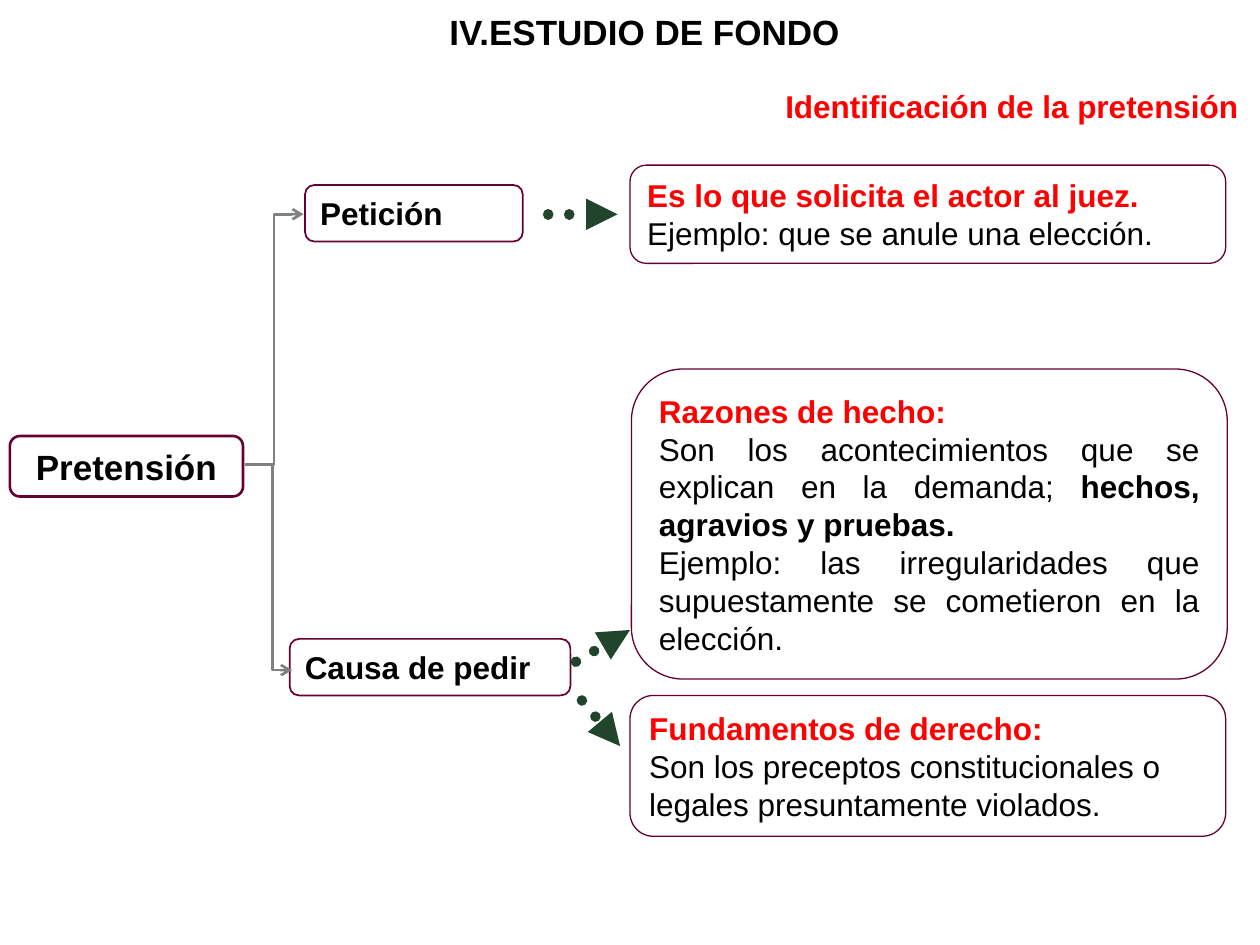
from lxml import etree
from pptx import Presentation
from pptx import util as u
from pptx.dml.color import RGBColor
from pptx.enum import dml, shapes, text
from pptx.oxml import ns

BLACK, RED, WHITE = "000000", "FF0000", "FFFFFF"
WINE, GREY, GREEN = "660033", "808080", "20442C"
LEFT, CENTER = text.PP_ALIGN.LEFT, text.PP_ALIGN.CENTER
RIGHT, JUSTIFY = text.PP_ALIGN.RIGHT, text.PP_ALIGN.JUSTIFY


def color(value):
    return RGBColor.from_string(value)


class Deck:
    font = "Arial"

    def __init__(self, prs):
        self.s = prs.slides.add_slide(prs.slide_layouts[5])

    def fill_text(self, tf, paragraphs, size, wrap=True):
        tf.word_wrap = wrap
        tf.auto_size = text.MSO_AUTO_SIZE.NONE
        tf.vertical_anchor = text.MSO_ANCHOR.MIDDLE
        for i, (align, runs) in enumerate(paragraphs):
            p = tf.paragraphs[0] if i == 0 else tf.add_paragraph()
            p.alignment = align
            for words, tint, bold in runs:
                r = p.add_run()
                r.text = words
                r.font.name = self.font
                r.font.size = u.Pt(size)
                r.font.bold = bold
                r.font.color.rgb = color(tint)

    def title(self, box, words, size):
        sp = self.s.shapes.title
        sp.left, sp.top, sp.width, sp.height = map(u.Cm, box)
        self.fill_text(sp.text_frame, [(RIGHT, [(words, BLACK, True)])], size, False)

    def label(self, box, words, size):
        sp = self.s.shapes.add_textbox(*map(u.Cm, box))
        self.fill_text(sp.text_frame, [(RIGHT, [(words, RED, True)])], size, False)

    def box(self, box, paragraphs, width, size=18, fill=None):
        sp = self.s.shapes.add_shape(shapes.MSO_SHAPE.ROUNDED_RECTANGLE, *map(u.Cm, box))
        sp.shadow.inherit = False
        if fill:
            sp.fill.solid()
            sp.fill.fore_color.rgb = color(fill)
        else:
            sp.fill.background()
        sp.line.color.rgb = color(WINE)
        sp.line.width = u.Pt(width)
        self.fill_text(sp.text_frame, paragraphs, size)

    def node(self, box, words, width=1, size=18, align=LEFT, fill=None):
        self.box(box, [(align, [(words, BLACK, True)])], width, size, fill)

    def definition(self, box, heading, *paragraphs):
        self.box(box, [(LEFT, [(heading, RED, True)]), *paragraphs], 0.75)

    def arrow(self, kind, points, tint, width, head, dotted=False):
        c = self.s.shapes.add_connector(kind, *map(u.Cm, points))
        c.line.color.rgb = color(tint)
        c.line.width = u.Pt(width)
        ln = c._element.spPr.find(ns.qn("a:ln"))
        if dotted:
            c.line.dash_style = dml.MSO_LINE.ROUND_DOT
            ln.set("cap", "rnd")
        etree.SubElement(ln, ns.qn("a:tailEnd")).set("type", head)
        etree.SubElement(c._element.spPr, ns.qn("a:effectLst"))

    def branch(self, *points):
        self.arrow(shapes.MSO_CONNECTOR.ELBOW, points, GREY, 1.5, "arrow")

    def dots(self, *points):
        self.arrow(shapes.MSO_CONNECTOR.STRAIGHT, points, GREEN, 6, "triangle", True)


def main():
    prs = Presentation()
    prs.slide_width, prs.slide_height = u.Cm(25.4), u.Cm(19.05)
    d = Deck(prs)

    d.title((8.74, 0.08, 8.64, 1.12), "IV.ESTUDIO DE FONDO ", 20)
    d.label((15.47, 1.63, 9.75, 1.02), "Identificación de la pretensión", 18)

    d.definition(
        (12.7, 3.33, 12.01, 1.98), "Es lo que solicita el actor al juez.",
        (LEFT, [("Ejemplo: que se anule una elección.", BLACK, False)]))
    d.node((6.15, 3.73, 4.39, 1.14), "Petición")
    d.node((5.84, 12.88, 5.66, 1.14), "Causa de pedir", fill=WHITE)
    d.branch(4.93, 9.37, 6.12, 4.32)
    d.branch(5.11, 9.37, 5.89, 13.51)
    d.definition(
        (12.7, 14.02, 12.01, 2.84), "Fundamentos de derecho:",
        (LEFT, [("Son los preceptos constitucionales o legales "
                 "presuntamente violados.", BLACK, False)]))
    d.definition(
        (12.73, 7.44, 12.01, 6.25), "Razones de hecho:",
        (JUSTIFY, [("Son los acontecimientos que se explican en la demanda; ", BLACK, False),
                   ("hechos, agravios y pruebas. ", BLACK, True)]),
        (JUSTIFY, [("Ejemplo: las irregularidades que supuestamente "
                    "se cometieron en la elección.", BLACK, False)]))
    d.node((0.2, 8.79, 4.7, 1.22), "Pretensión", 1.5, 20, CENTER, WHITE)

    d.dots(11.73, 14.12, 12.5, 15.04)
    d.dots(11.05, 4.32, 12.45, 4.32)
    d.dots(11.61, 13.34, 12.7, 12.7)

    prs.save("out.pptx")


if __name__ == "__main__":
    main()
